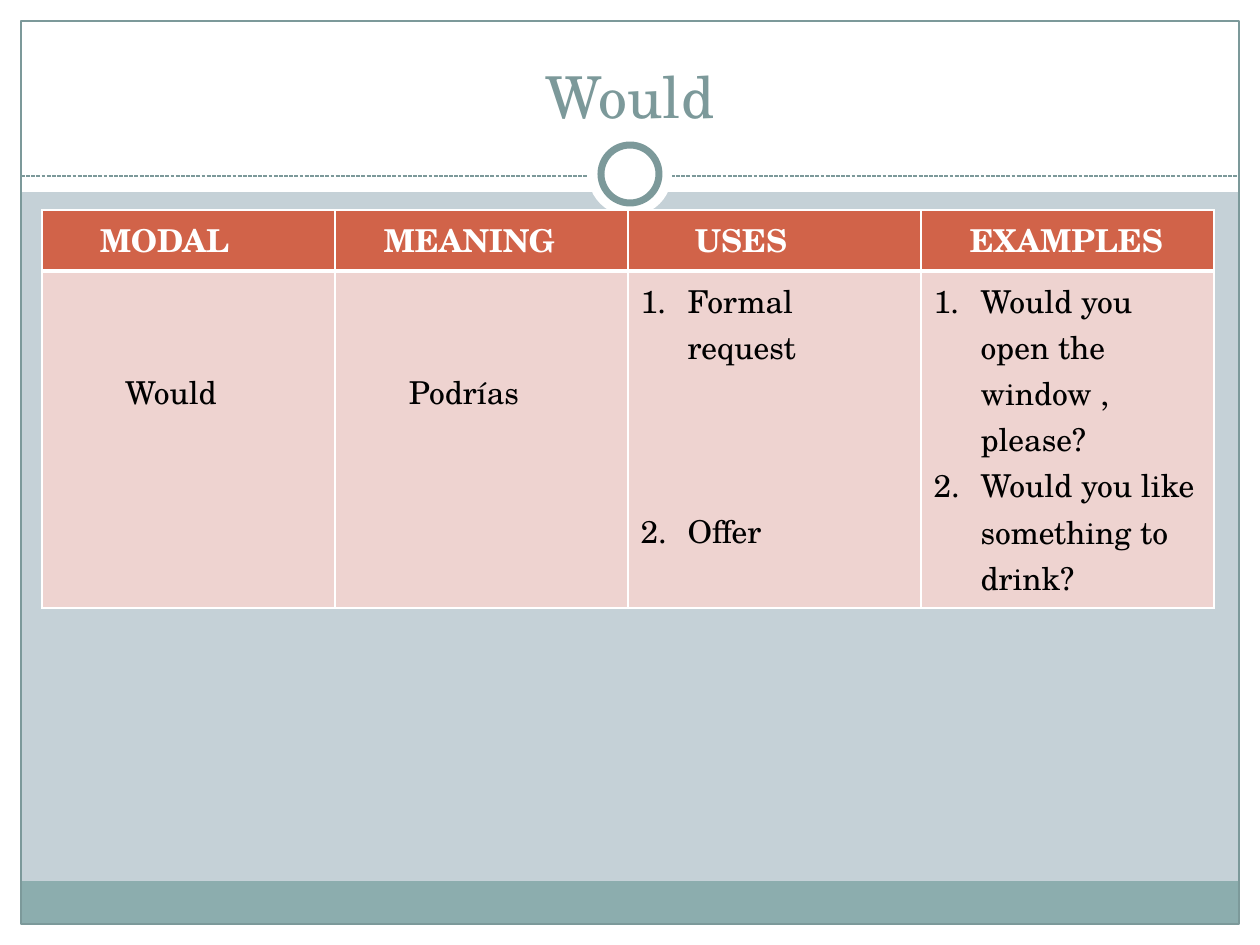
from lxml.etree import SubElement
from pptx import Presentation
from pptx.dml.color import RGBColor
from pptx.enum.dml import MSO_LINE
from pptx.enum.shapes import MSO_CONNECTOR, MSO_SHAPE
from pptx.enum.text import MSO_ANCHOR, PP_ALIGN
from pptx.oxml import parse_xml
from pptx.oxml.ns import nsdecls, qn
from pptx.util import Inches, Pt

PX = Inches(1) / 126
FONT = "TeX Gyre Schola"
COLORS = {
    "back": "C5D1D7", "white": "FFFFFF", "teal": "7C999A", "foot": "8CADAE",
    "head": "D16349", "cell": "EED3D0", "text": "000000",
}
LINE = 46  # height of one line of table text
PAD = 6    # top inset of a cell

# Each cell: left inset, blank lines above, items
HEADS = [("MODAL", 58), ("MEANING", 49), ("USES", 67), ("EXAMPLES", 49)]
WORDS = [("Would", 83), ("Podrías", 74)]
# Each list item: text, lines of space before it
LISTS = [
    [("Formal request", 0), ("Offer", 3)],
    [("Would you open the window , please?", 0),
     ("Would you like something to drink?", 0)],
]


def emu(px):
    return round(px * PX)


def rgb(name):
    return RGBColor.from_string(COLORS[name])


def style(para, size, color, bold=False):
    font = para.font
    font.name, font.size, font.bold = FONT, Pt(size), bold
    font.color.rgb = rgb(color)


def add_box(slide, box, fill=None, line=None, width=0.75,
            kind=MSO_SHAPE.RECTANGLE):
    shape = slide.shapes.add_shape(kind, *map(emu, box))
    shape.shadow.inherit = False
    if fill:
        shape.fill.solid()
        shape.fill.fore_color.rgb = rgb(fill)
    else:
        shape.fill.background()
    if line:
        shape.line.color.rgb = rgb(line)
        shape.line.width = Pt(width)
    else:
        shape.line.fill.background()


def add_frame(slide, wide, high):
    edge, top, foot = 21, 192, 43
    # White margins
    add_box(slide, (0, high - edge, wide, edge), "white")
    add_box(slide, (0, 0, wide, top), "white")
    for left in (0, wide - edge):
        add_box(slide, (left, 0, edge, high), "white")
    # Foot band and outline
    inner = wide - 2 * edge
    add_box(slide, (edge, high - edge - foot, inner, foot), "foot")
    add_box(slide, (edge, edge, inner, high - 2 * edge), line="teal")
    # Dashed rule
    y = emu(176)
    rule = slide.shapes.add_connector(
        MSO_CONNECTOR.STRAIGHT, emu(edge), y, emu(wide - edge), y)
    rule.line.color.rgb = rgb("teal")
    rule.line.width = Pt(0.75)
    rule.line.dash_style = MSO_LINE.SQUARE_DOT
    SubElement(rule.element.spPr, qn("a:effectLst"))
    # Ring
    for size, line in ((84, None), (58, "teal")):
        box = ((wide - size) / 2, 174 - size / 2, size, size)
        add_box(slide, box, "white", line, 4, MSO_SHAPE.OVAL)


def add_title(slide, box, text):
    title = slide.shapes.title
    title.left, title.top, title.width, title.height = map(emu, box)
    frame = title.text_frame
    frame.text = text
    frame.vertical_anchor = MSO_ANCHOR.BOTTOM
    para = frame.paragraphs[0]
    para.alignment = PP_ALIGN.CENTER
    style(para, 33, "teal")
    # Bring the title in front of the frame
    title.element.getparent().append(title.element)


def paint(cell, fill, top, bottom):
    cell.fill.solid()
    cell.fill.fore_color.rgb = rgb(fill)
    props = cell._tc.get_or_add_tcPr()
    sides = (("L", 1), ("R", 1), ("T", top), ("B", bottom))
    for i, (side, width) in enumerate(sides):
        props.insert(i, parse_xml(
            f'<a:ln{side} {nsdecls("a")} w="{Pt(width)}"><a:solidFill>'
            f'<a:srgbClr val="{COLORS["white"]}"/></a:solidFill></a:ln{side}>'))


def put_word(cell, text, inset, color, bold=False, skip=0):
    cell.margin_left = emu(inset)
    cell.margin_top = emu(PAD + skip * LINE)
    cell.text = text
    style(cell.text_frame.paragraphs[0], 18, color, bold)


def put_list(cell, items):
    frame = cell.text_frame
    for i, (text, gap) in enumerate(items):
        para = frame.add_paragraph() if i else frame.paragraphs[0]
        para.text = text
        if gap:
            para.space_before = emu(gap * LINE)
        props = para._p.get_or_add_pPr()
        props.set("marL", str(emu(47)))
        props.set("indent", str(emu(-47)))
        mark = SubElement(props, qn("a:buAutoNum"), type="arabicPeriod")
        if gap:
            mark.set("startAt", str(i + 1))
        style(para, 18, "text")


def add_grid(slide, box):
    left, top, wide, high = box
    grid = slide.shapes.add_table(2, len(HEADS), *map(emu, box)).table
    head = 59
    grid.rows[0].height, grid.rows[1].height = emu(head), emu(high - head)
    for col in grid.columns:
        col.width = emu(wide / len(HEADS))
    # Head row
    for i, (text, inset) in enumerate(HEADS):
        paint(grid.cell(0, i), "head", 1, 3)
        paint(grid.cell(1, i), "cell", 3, 1)
        put_word(grid.cell(0, i), text, inset, "white", bold=True)
    # Body row
    for i, (text, inset) in enumerate(WORDS):
        put_word(grid.cell(1, i), text, inset, "text", skip=2)
    for i, items in enumerate(LISTS, len(WORDS)):
        put_list(grid.cell(1, i), items)


def main():
    deck = Presentation()
    deck.slide_width, deck.slide_height = Inches(10), Inches(7.5)
    slide = deck.slides.add_slide(deck.slide_layouts[5])
    back = slide.background.fill
    back.solid()
    back.fore_color.rgb = rgb("back")
    add_frame(slide, 1260, 945)
    add_title(slide, (42, 32, 1176, 104), "Would")
    add_grid(slide, (42, 210, 1172, 396))
    deck.save("out.pptx")


if __name__ == "__main__":
    main()
